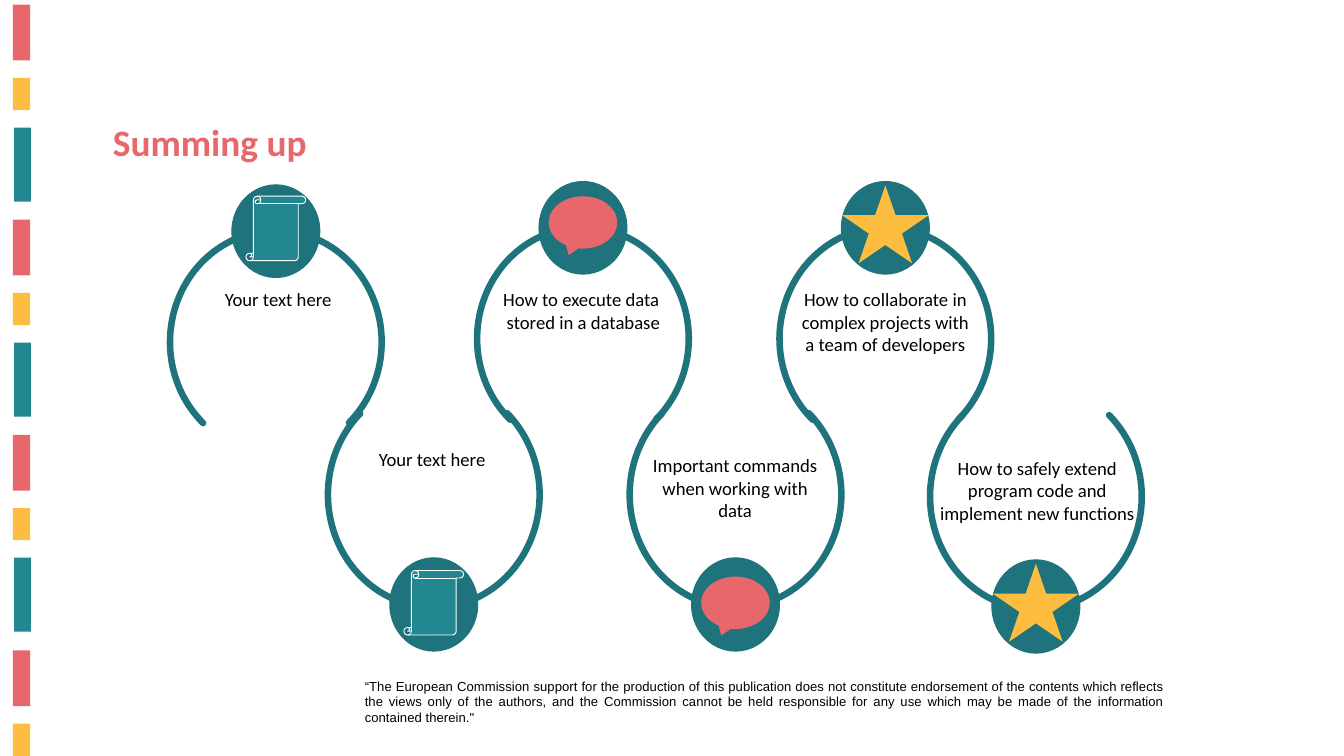
"""Build the "Summing up" slide: a winding chain of six topics beside a striped edge."""
from dataclasses import dataclass

from pptx import Presentation
from pptx.dml.color import RGBColor
from pptx.enum.shapes import MSO_SHAPE
from pptx.enum.text import MSO_ANCHOR, MSO_AUTO_SIZE, PP_ALIGN
from pptx.util import Emu, Pt


@dataclass(frozen=True)
class Theme:
    red: str = "E8676A"
    title_red: str = "E7686A"
    yellow: str = "FDBD40"
    teal: str = "238791"
    dark_teal: str = "1E737C"
    white: str = "FFFFFF"
    black: str = "000000"
    title_size: int = 40
    body_size: int = 20
    note_size: int = 14
    font: str = "Calibri"
    note_font: str = "Arial"


T = Theme()
PX = 9144


def add_shape(kind, x, y, w, h, fill=None, line=None, width=1):
    sp = s.shapes.add_shape(kind, *(Emu(round(v * PX)) for v in (x, y, w, h)))
    sp.shadow.inherit = False
    if fill:
        sp.fill.solid()
        sp.fill.fore_color.rgb = RGBColor.from_string(fill)
    else:
        sp.fill.background()
    if line:
        sp.line.color.rgb = RGBColor.from_string(line)
        sp.line.width = Pt(width)
    else:
        sp.line.fill.background()
    return sp


def put_text(text, x, y, w, h, sp=None, size=T.body_size, font=T.font,
             color=T.black, bold=False, align=PP_ALIGN.CENTER):
    sp = sp or s.shapes.add_textbox(0, 0, 0, 0)
    sp.left, sp.top, sp.width, sp.height = (Emu(v * PX) for v in (x, y, w, h))
    tf = sp.text_frame
    tf.word_wrap = True
    tf.auto_size = MSO_AUTO_SIZE.SHAPE_TO_FIT_TEXT
    tf.vertical_anchor = MSO_ANCHOR.TOP
    p = tf.paragraphs[0]
    p.text = text
    p.alignment = align
    for r in p.runs:
        r.font.size = Pt(size)
        r.font.name = font
        r.font.bold = bold
        r.font.color.rgb = RGBColor.from_string(color)
    return p


prs = Presentation()
prs.slide_width, prs.slide_height = Emu(2000 * PX), Emu(1125 * PX)
s = prs.slides.add_slide(prs.slide_layouts[5])

stripes = [(19, 7, 26, 83, T.red), (19, 116, 26, 48, T.yellow), (21, 190, 25, 110, T.teal)]
for i in range(4):
    for x, y, w, h, color in stripes:
        top = y + 961 * i // 3
        if top < 1125:
            add_shape(MSO_SHAPE.RECTANGLE, x, top, w, h, color)

put_text("Summing up", 158, 172, 658, 77, sp=s.shapes.title, size=T.title_size,
         color=T.title_red, bold=True, align=PP_ALIGN.LEFT)

note = put_text(
    "“The European Commission support for the production of this publication does not "
    "constitute endorsement of the contents which reflects the views only of the authors, "
    "and the Commission cannot be held responsible for any use which may be made of the "
    'information contained therein."',
    533, 1004, 1210, 81, size=T.note_size, font=T.note_font, align=PP_ALIGN.JUSTIFY)
for r in note.runs:
    r._r.get_or_add_rPr().set("spc", "5")

scroll = (MSO_SHAPE.VERTICAL_SCROLL, 89, 96, T.teal, T.white)
bubble = (MSO_SHAPE.OVAL_CALLOUT, 102, 78, T.red, None)
star = (MSO_SHAPE.STAR_5_POINT, 129, 116, T.yellow, None)

# arc left, arc top, lower row, icon, icon top, text, text box
topics = [
    (253, 343, False, scroll, 292, "Your text here", (269, 424, 290, 44)),
    (488, 568, True, scroll, 849, "Your text here", (489, 661, 308, 44)),
    (710, 338, False, bubble, 292, "How to execute data \vstored in a database",
     (714, 424, 308, 77)),
    (937, 568, True, bubble, 858, "Important commands when working with data",
     (949, 671, 290, 111)),
    (1160, 338, False, star, 276,
     "How to collaborate in complex projects with a team of developers",
     (1180, 424, 275, 111)),
    (1384, 571, True, star, 839,
     "How to safely extend program code and implement new functions",
     (1389, 675, 309, 145)),
]
arc_w, circle_w = 315, 131
for x, y, lower, icon, icon_top, text, box in topics:
    arc_h, circle_h, rise = (336, 139, 262) if lower else (332, 138, -68)
    arc = add_shape(MSO_SHAPE.ARC, x, y, arc_w, arc_h, line=T.dark_teal, width=7)
    arc.adjustments[0], arc.adjustments[1] = 79.141, 28.684
    arc.rotation = 180 if lower else 0
    arc.element.spPr.get_or_add_ln().set("cap", "rnd")

    add_shape(MSO_SHAPE.OVAL, x + (arc_w - circle_w) / 2, y + rise, circle_w, circle_h,
              T.dark_teal, T.dark_teal)
    kind, w, h, fill, line = icon
    add_shape(kind, x + (arc_w - w) / 2, icon_top, w, h, fill, line)
    put_text(text, *box)

prs.save("out.pptx")
